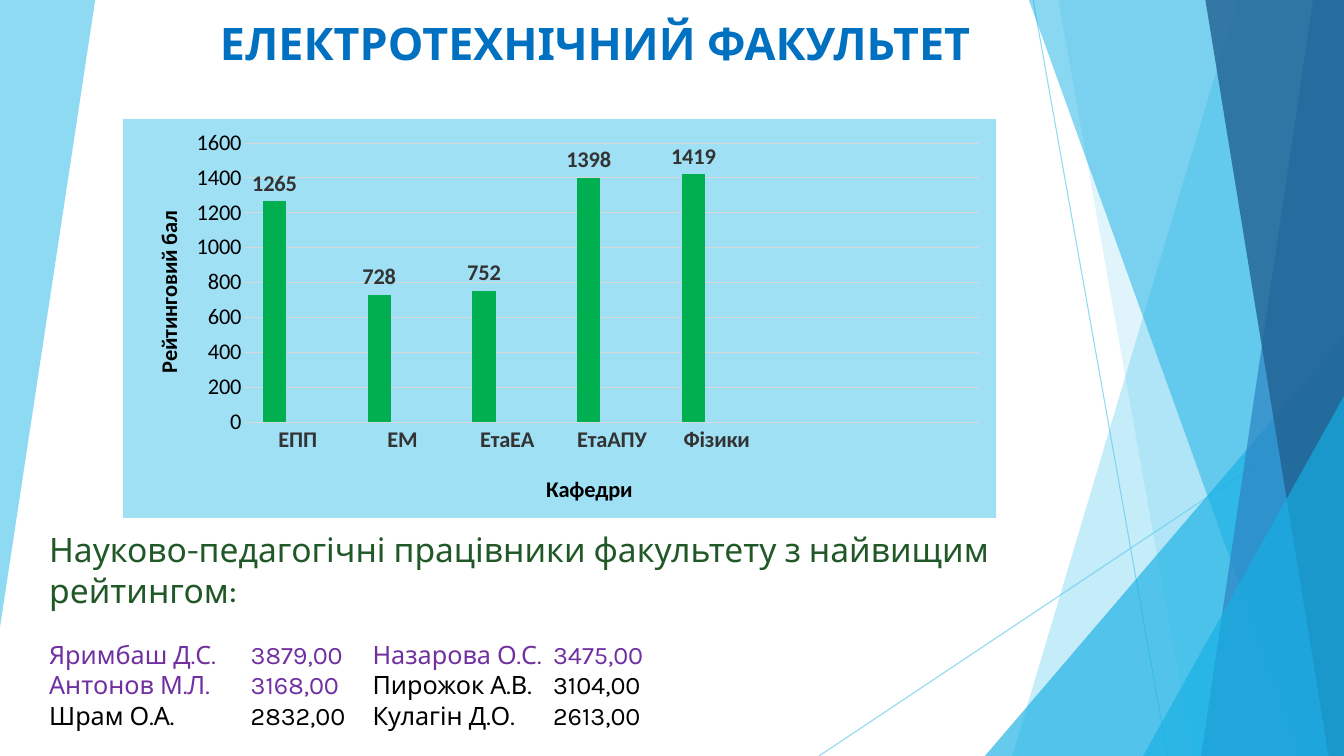
import pptx
import pptx.chart.data
import pptx.dml.color
import pptx.enum.chart
import pptx.enum.shapes
import pptx.enum.text
import pptx.oxml
import pptx.oxml.ns
import pptx.oxml.xmlchemy
import pptx.util

Pt = pptx.util.Pt
RGB = pptx.dml.color.RGBColor.from_string
qn = pptx.oxml.ns.qn
new_element = pptx.oxml.xmlchemy.OxmlElement

THEME = {
    "text_font": "Karla", "chart_font": "Calibri",
    "title": "0070C0", "heading": "215828", "leader": "7030A0", "black": "000000",
    "sky": "5FCBEF", "cyan": "17B0E4", "blue": "2E83C3", "navy": "226292",
    "chart_area": "9FE0F5", "grid": "D9D9D9", "label": "333333",
    "series": ["00B050", "ED7D31", "A5A5A5"],
    "title_size": 32, "heading_size": 24, "body_size": 18, "chart_size": 16,
}


def paint(item, color, opacity):
    """Set a see-through colour on a shape's fill or a connector's line."""
    if hasattr(item, "begin_x"):
        fill = item.line.fill
        item.line.width = Pt(0.75)
        item._element.spPr.append(new_element("a:effectLst"))
    else:
        fill = item.fill
        item.line.fill.background()
        item.shadow.inherit = False
    fill.solid()
    fill.fore_color.rgb = RGB(THEME[color])
    alpha = new_element("a:alpha")
    alpha.set("val", str(opacity * 1000))
    item._element.spPr.find(".//" + qn("a:srgbClr")).append(alpha)


def place(parent, **fractions):
    """Give a chart part a fixed place, in fractions of the chart."""
    layout = parent.find(qn("c:layout"))
    if layout is None:
        layout = new_element("c:layout")
        text = parent.find(qn("c:tx"))
        if text is None:
            parent.insert(0, layout)
        else:
            text.addnext(layout)
    manual = new_element("c:manualLayout")
    layout.append(manual)
    settings = {"xMode": "edge", "yMode": "edge", **fractions}
    if "w" in fractions:
        settings = {"layoutTarget": "inner", **settings}
    for name, value in settings.items():
        setting = new_element("c:" + name)
        setting.set("val", str(value))
        manual.append(setting)


deck = pptx.Presentation()
deck.slide_width, deck.slide_height = Pt(960), Pt(540)
slide = deck.slides.add_slide(deck.slide_layouts[6])
shapes = slide.shapes

# Left wedge and the two thin rays
builder = shapes.build_freeform(0, 0)
builder.add_line_segments([(Pt(68), 0), (0, Pt(448))])
paint(builder.convert_to_shape(), "sky", 70)
for x1, y1, x2, y2 in [(738, 0, 834, 540), (960, 290, 585, 540)]:
    ray = shapes.add_connector(pptx.enum.shapes.MSO_CONNECTOR.STRAIGHT,
                               Pt(x1), Pt(y1), Pt(x2), Pt(y2))
    paint(ray, "sky", 70)

# Right-hand facets: bands as (top x, bottom x), triangles as (left, top)
facets = [
    ("band", 884, 723, "sky", 36), ("band", 756, 852, "sky", 20),
    ("triangle", 703.5, 240, "cyan", 66), ("band", 735, 929.5, "cyan", 50),
    ("band", 938, 858, "blue", 70), ("band", 861, 949, "navy", 80),
    ("triangle", 816.5, 283, "cyan", 66),
]
for kind, first, second, color, opacity in facets:
    if kind == "band":
        builder = shapes.build_freeform(Pt(first), 0)
        builder.add_line_segments([(Pt(960), 0), (Pt(960), Pt(540)), (Pt(second), Pt(540))])
        facet = builder.convert_to_shape()
    else:
        facet = shapes.add_shape(pptx.enum.shapes.MSO_SHAPE.ISOSCELES_TRIANGLE,
                                 Pt(first), Pt(second), Pt(960 - first), Pt(540 - second))
        facet.adjustments[0] = 1
    paint(facet, color, opacity)

# Title
faculty = shapes.add_textbox(Pt(150), Pt(10), Pt(626), Pt(43.5)).text_frame
faculty.word_wrap = True
faculty.vertical_anchor = pptx.enum.text.MSO_ANCHOR.BOTTOM
faculty.text = "ЕЛЕКТРОТЕХНІЧНИЙ ФАКУЛЬТЕТ"
font = faculty.paragraphs[0].runs[0].font
font.name, font.size, font.bold = THEME["text_font"], Pt(THEME["title_size"]), True
font.color.rgb = RGB(THEME["title"])

# Staff with the highest rating
staff = shapes.add_textbox(Pt(28), Pt(374.5), Pt(788), Pt(167)).text_frame
staff.word_wrap = True
lines = [
    [("Науково-педагогічні працівники факультету з найвищим рейтингом:", "heading")],
    [("Яримбаш Д.С.\t3879,00\tНазарова О.С.\t3475,00", "leader")],
    [("Антонов М.Л.\t3168,00\t", "leader"), ("Пирожок А.В.\t3104,00", "black")],
    [("Шрам О.А.\t2832,00\tКулагін Д.О.\t2613,00", "black")],
]
for index, line in enumerate(lines):
    paragraph = staff.paragraphs[0] if index == 0 else staff.add_paragraph()
    for text, color in line:
        run = paragraph.add_run()
        run.text = text
        run.font.name = THEME["text_font"]
        run.font.size = Pt(THEME["body_size" if index else "heading_size"])
        run.font.color.rgb = RGB(THEME[color])
    if index:
        tabs = new_element("a:tabLst")
        for position in (144, 231, 360):
            tab = new_element("a:tab")
            tab.set("pos", str(int(Pt(position))))
            tab.set("algn", "l")
            tabs.append(tab)
        paragraph._p.get_or_add_pPr().append(tabs)
staff.paragraphs[1].space_before = Pt(21)

# Rating chart: the last two categories are left empty
ratings = pptx.chart.data.CategoryChartData()
ratings.categories = ["ЕПП", "ЕМ", "ЕтаЕА", "ЕтаАПУ", "Фізики", "", ""]
ratings.add_series("Series 1", [1265, 728, 752, 1398, 1419, None, None])
for name in ("Series 2", "Series 3"):
    ratings.add_series(name, [None] * 7)
chart = shapes.add_chart(pptx.enum.chart.XL_CHART_TYPE.COLUMN_CLUSTERED,
                         Pt(88), Pt(85), Pt(623.5), Pt(285), ratings).chart
chart.has_legend = chart.has_title = False
chart.font.name, chart.font.size = THEME["chart_font"], Pt(THEME["chart_size"])
chart.font.color.rgb = RGB(THEME["black"])

area = pptx.oxml.parse_xml(
    '<c:spPr xmlns:c="http://schemas.openxmlformats.org/drawingml/2006/chart"'
    ' xmlns:a="http://schemas.openxmlformats.org/drawingml/2006/main"><a:solidFill>'
    f'<a:srgbClr val="{THEME["chart_area"]}"/></a:solidFill><a:ln><a:noFill/></a:ln></c:spPr>')
chart._chartSpace.find(qn("c:chart")).addnext(area)

# Columns and their values
columns = chart.plots[0]
columns.gap_width, columns.overlap, columns.vary_by_categories = 150, 0, False
for series, color in zip(columns.series, THEME["series"]):
    series.format.fill.solid()
    series.format.fill.fore_color.rgb = RGB(color)
labels = columns.series[0].data_labels
labels.show_value = True
labels.position = pptx.enum.chart.XL_LABEL_POSITION.OUTSIDE_END

# Axes
departments, score = chart.category_axis, chart.value_axis
for axis, caption, x, y in [(departments, "Кафедри", 0.48, 0.88),
                            (score, "Рейтинговий бал", 0.03, 0.22)]:
    axis.major_tick_mark = axis.minor_tick_mark = pptx.enum.chart.XL_TICK_MARK.NONE
    axis.format.line.fill.background()
    axis.tick_labels.font.size = Pt(THEME["chart_size"])
    axis.axis_title.text_frame.text = caption
    font = axis.axis_title.text_frame.paragraphs[0].runs[0].font
    font.name, font.size, font.bold = THEME["chart_font"], Pt(THEME["chart_size"]), True
    font.color.rgb = RGB(THEME["black"])
    place(axis.axis_title._element, x=x, y=y)
for font in (labels.font, departments.tick_labels.font):
    font.name, font.size, font.bold = THEME["chart_font"], Pt(THEME["chart_size"]), True
    font.color.rgb = RGB(THEME["label"])
score.minimum_scale, score.maximum_scale, score.major_unit = 0, 1600, 200
score.major_gridlines.format.line.width = Pt(0.5)
score.major_gridlines.format.line.color.rgb = RGB(THEME["grid"])
place(chart._chartSpace.find(".//" + qn("c:plotArea")), x=0.14, y=0.06, w=0.84, h=0.7)

deck.save("out.pptx")
